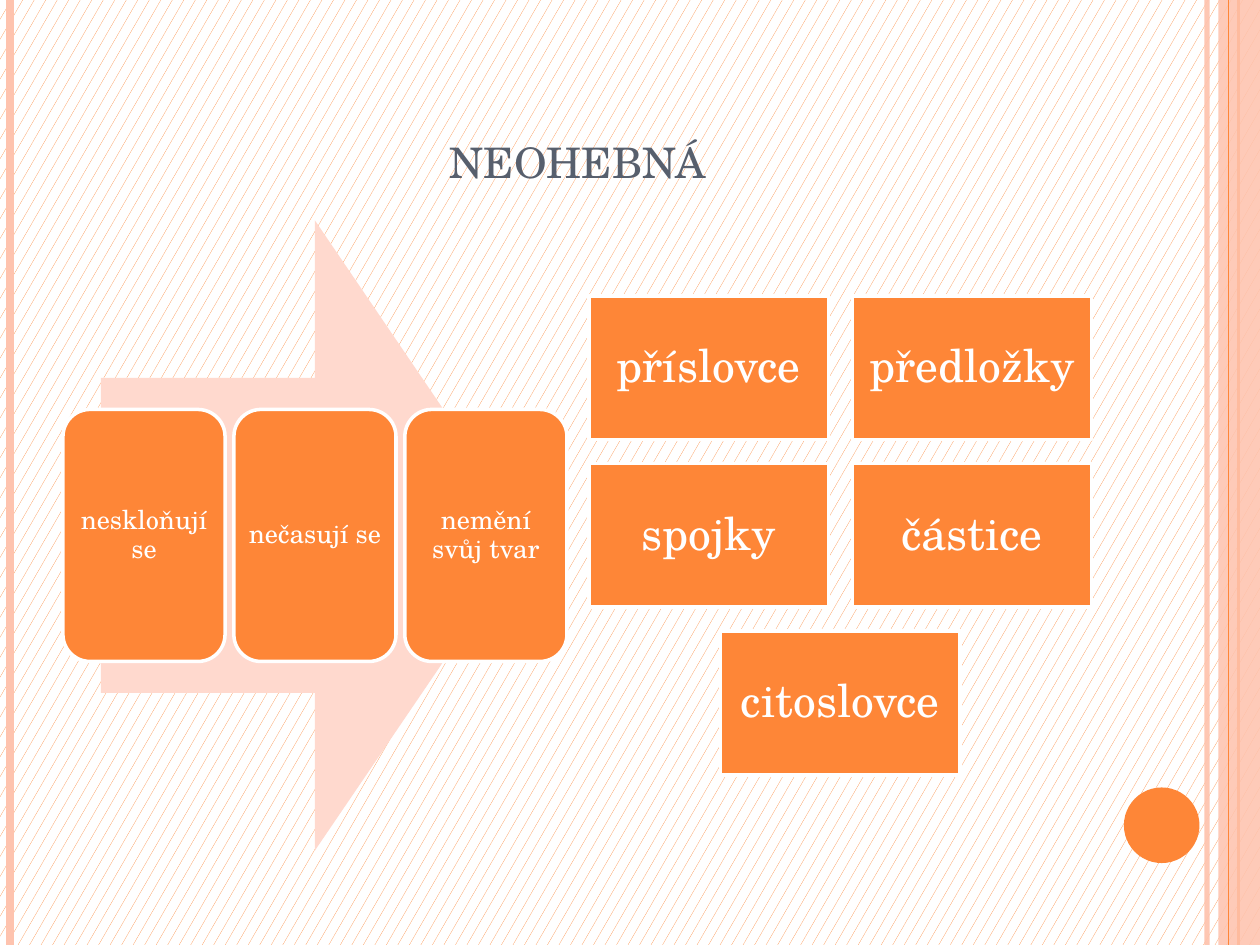
from lxml.etree import SubElement
from pptx import Presentation
from pptx.dml.color import RGBColor
from pptx.enum.dml import MSO_PATTERN
from pptx.enum.shapes import MSO_CONNECTOR, MSO_SHAPE as Shape
from pptx.enum.text import MSO_ANCHOR as Anchor, MSO_AUTO_SIZE, PP_ALIGN as Align
from pptx.oxml.ns import qn
from pptx.util import Inches, Pt

# Content
TITLE = "neohebná"
TRAITS = ["neskloňují se", "nečasují se", "nemění svůj tvar"]
WORD_CLASSES = [["příslovce", "předložky"], ["spojky", "částice"], ["citoslovce"]]

THEME = {
    "font": "TeX Gyre Schola",
    "accent": "FE8637", "stripe": "FEC3AE", "arrow": "FFD9CE",
    "title": "575F6D", "light": "FFFFFF",
    "title_size": 30, "trait_size": 15, "class_size": 26,
}
WIDTH, HEIGHT = 10, 7.5
# x, colour, line width, opacity in percent
RULES_BELOW = [(9.58, "stripe", 3, 93), (0.08, "stripe", 4.5, 100),
               (9.83, "accent", 1.5, 100)]
RULES_ABOVE = [(9.75, "accent", 0.75, 100)]


def colour(name):
    return RGBColor.from_string(THEME[name])


def set_opacity(parent, percent):
    if percent < 100:
        tint = next(parent.iter(qn("a:srgbClr")))
        SubElement(tint, qn("a:alpha"), val=str(percent * 1000))


def add_rule(page, x, name, width, opacity):
    rule = page.shapes.add_connector(
        MSO_CONNECTOR.STRAIGHT, Inches(x), 0, Inches(x), Inches(HEIGHT))
    rule.line.color.rgb = colour(name)
    rule.line.width = Pt(width)
    properties = rule._element.spPr
    set_opacity(properties, opacity)
    SubElement(properties, qn("a:effectLst"))


def add_block(page, kind, left, top, width, height, fill, opacity=100):
    block = page.shapes.add_shape(
        kind, Inches(left), Inches(top), Inches(width), Inches(height))
    block.shadow.inherit = False
    block.fill.solid()
    block.fill.fore_color.rgb = colour(fill)
    set_opacity(block._element.spPr, opacity)
    block.line.fill.background()
    return block


def write(box, text, size, name, anchor):
    frame = box.text_frame
    frame.word_wrap = True
    frame.auto_size = MSO_AUTO_SIZE.NONE
    frame.vertical_anchor = anchor
    para = frame.paragraphs[0]
    para.alignment = Align.CENTER
    span = para.add_run()
    span.text = text
    span.font.name = THEME["font"]
    span.font.size = Pt(THEME[size])
    span.font.color.rgb = colour(name)
    return para, span


def add_card(page, kind, place, text, size, inset):
    card = add_block(page, kind, *place, "accent")
    card.line.color.rgb = colour("light")
    card.line.width = Pt(2)
    frame = card.text_frame
    frame.margin_left = frame.margin_right = Inches(inset)
    frame.margin_top = frame.margin_bottom = Inches(inset)
    para, _ = write(card, text, size, "light", Anchor.MIDDLE)
    para.line_spacing = 0.9


def main():
    deck = Presentation()
    deck.slide_width, deck.slide_height = Inches(WIDTH), Inches(HEIGHT)
    page = deck.slides.add_slide(deck.slide_layouts[5])

    # Hatched background
    backdrop = page.background.fill
    backdrop.patterned()
    backdrop.pattern = MSO_PATTERN.SMALL_CONFETTI
    backdrop.fore_color.rgb = colour("accent")
    backdrop.back_color.rgb = colour("light")

    # Side stripes and dot
    for rule in RULES_BELOW:
        add_rule(page, *rule)
    add_block(page, Shape.RECTANGLE, 9.67, 0, 0.33, HEIGHT, "stripe", 87)
    for rule in RULES_ABOVE:
        add_rule(page, *rule)
    add_block(page, Shape.OVAL, 8.92, 6.25, 0.6, 0.6, "accent")

    # Title in small capitals
    title = page.shapes.title
    title.left, title.top = Inches(0.5), Inches(0.3)
    title.width, title.height = Inches(8.17), Inches(1.25)
    _, span = write(title, TITLE, "title_size", "title", Anchor.BOTTOM)
    span._r.get_or_add_rPr().set("cap", "small")

    # Traits along the arrow
    add_block(page, Shape.RIGHT_ARROW, 0.8, 1.75, 3.4, 5, "arrow")
    left, span_width, gap = 0.5, 4, 0.07
    width = (span_width - gap * (len(TRAITS) - 1)) / len(TRAITS)
    for i, trait in enumerate(TRAITS):
        place = (left + i * (width + gap), 3.25, width, 2)
        add_card(page, Shape.ROUNDED_RECTANGLE, place, trait, "trait_size", 0)

    # Word classes, each row centred
    centre, top, width, height, gap = 6.67, 2.35, 1.9, 1.14, 0.19
    for r, row in enumerate(WORD_CLASSES):
        start = centre - (len(row) * (width + gap) - gap) / 2
        for c, word in enumerate(row):
            place = (start + c * (width + gap), top + r * (height + gap), width, height)
            add_card(page, Shape.RECTANGLE, place, word, "class_size", 0.11)

    deck.save("out.pptx")


if __name__ == "__main__":
    main()
